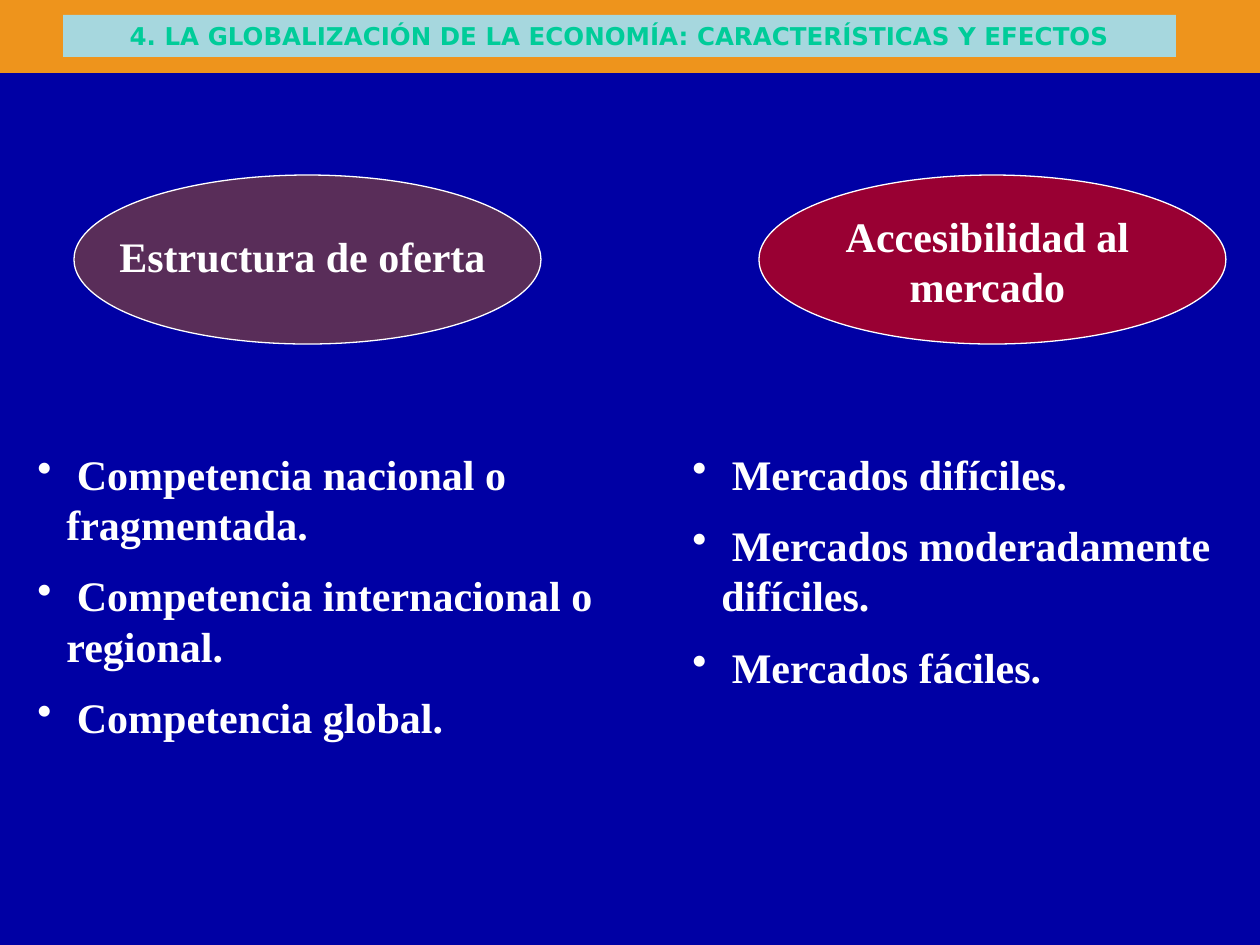
from dataclasses import dataclass

from lxml.etree import SubElement
from pptx import Presentation
from pptx.dml.color import RGBColor
from pptx.enum.shapes import MSO_SHAPE as Shape
from pptx.enum.text import MSO_ANCHOR as Anchor, PP_ALIGN as Align
from pptx.oxml.ns import qn
from pptx.util import Emu, Pt

PX_PER_INCH = 126
NAVY = RGBColor(0x00, 0x00, 0xA4)
ORANGE = RGBColor(0xEE, 0x94, 0x1C)
PALE_BLUE = RGBColor(0xA6, 0xD7, 0xDE)
GREEN = RGBColor(0x00, 0xCC, 0x99)
PURPLE = RGBColor(0x59, 0x2D, 0x59)
CRIMSON = RGBColor(0x99, 0x00, 0x33)
WHITE = RGBColor(0xFF, 0xFF, 0xFF)
BULLET_INDENT = 29


@dataclass(frozen=True)
class Box:
    left: int
    top: int
    width: int
    height: int


@dataclass(frozen=True)
class Topic:
    heading: str
    color: RGBColor
    ellipse: Box
    label: Box
    panel: Box
    items: tuple[str, ...]


TOPICS = (
    Topic("Estructura de oferta", PURPLE,
          Box(74, 175, 467, 169), Box(104, 224, 397, 63), Box(25, 442, 586, 315),
          (" Competencia nacional o fragmentada.",
           " Competencia internacional o regional.",
           " Competencia global.")),
    Topic("Accesibilidad al mercado", CRIMSON,
          Box(759, 175, 467, 169), Box(789, 204, 397, 114), Box(680, 442, 580, 267),
          (" Mercados difíciles.",
           " Mercados moderadamente difíciles.",
           " Mercados fáciles.")),
)


def px(length: int) -> Emu:
    return Emu(round(length * 914400 / PX_PER_INCH))


def place(box: Box) -> tuple[Emu, ...]:
    return px(box.left), px(box.top), px(box.width), px(box.height)


def add_block(slide, kind, box: Box, fill: RGBColor, line: RGBColor | None = None):
    shape = slide.shapes.add_shape(kind, *place(box))
    shape.shadow.inherit = False
    shape.fill.solid()
    shape.fill.fore_color.rgb = fill
    if line is None:
        shape.line.fill.background()
    else:
        shape.line.color.rgb = line
        shape.line.width = Pt(0.75)
    return shape


def add_bullet(paragraph) -> None:
    properties = paragraph._p.get_or_add_pPr()
    properties.set("marL", str(px(BULLET_INDENT)))
    properties.set("indent", str(-px(BULLET_INDENT)))
    SubElement(properties, qn("a:buChar")).set("char", "•")


def write_text(shape, *texts: str, size: int = 24, font: str = "Times New Roman",
               color: RGBColor = WHITE, align: Align = Align.CENTER,
               bulleted: bool = False) -> None:
    frame = shape.text_frame
    frame.word_wrap = True
    frame.vertical_anchor = Anchor.TOP
    for index, text in enumerate(texts):
        paragraph = frame.add_paragraph() if index else frame.paragraphs[0]
        paragraph.alignment = align
        if index:
            paragraph.space_before = Pt(size / 2)
        if bulleted:
            add_bullet(paragraph)
        run = paragraph.add_run()
        run.text = text
        run.font.name = font
        run.font.size = Pt(size)
        run.font.bold = True
        run.font.color.rgb = color


def add_topic(slide, topic: Topic) -> None:
    add_block(slide, Shape.OVAL, topic.ellipse, topic.color, line=WHITE)
    write_text(slide.shapes.add_textbox(*place(topic.label)), topic.heading)
    panel = add_block(slide, Shape.RECTANGLE, topic.panel, NAVY)
    write_text(panel, *topic.items, align=Align.LEFT, bulleted=True)


def main() -> None:
    presentation = Presentation()
    presentation.slide_width = px(1260)
    presentation.slide_height = px(945)
    slide = presentation.slides.add_slide(presentation.slide_layouts[6])
    slide.background.fill.solid()
    slide.background.fill.fore_color.rgb = NAVY

    # Title band
    add_block(slide, Shape.RECTANGLE, Box(0, 0, 1260, 73), ORANGE)
    title = add_block(slide, Shape.RECTANGLE, Box(63, 15, 1113, 42), PALE_BLUE)
    write_text(title, "4. LA GLOBALIZACIÓN DE LA ECONOMÍA: CARACTERÍSTICAS Y EFECTOS",
               size=14, font="DejaVu Sans", color=GREEN)

    # Topic columns
    for topic in TOPICS:
        add_topic(slide, topic)

    presentation.save("out.pptx")


if __name__ == "__main__":
    main()
